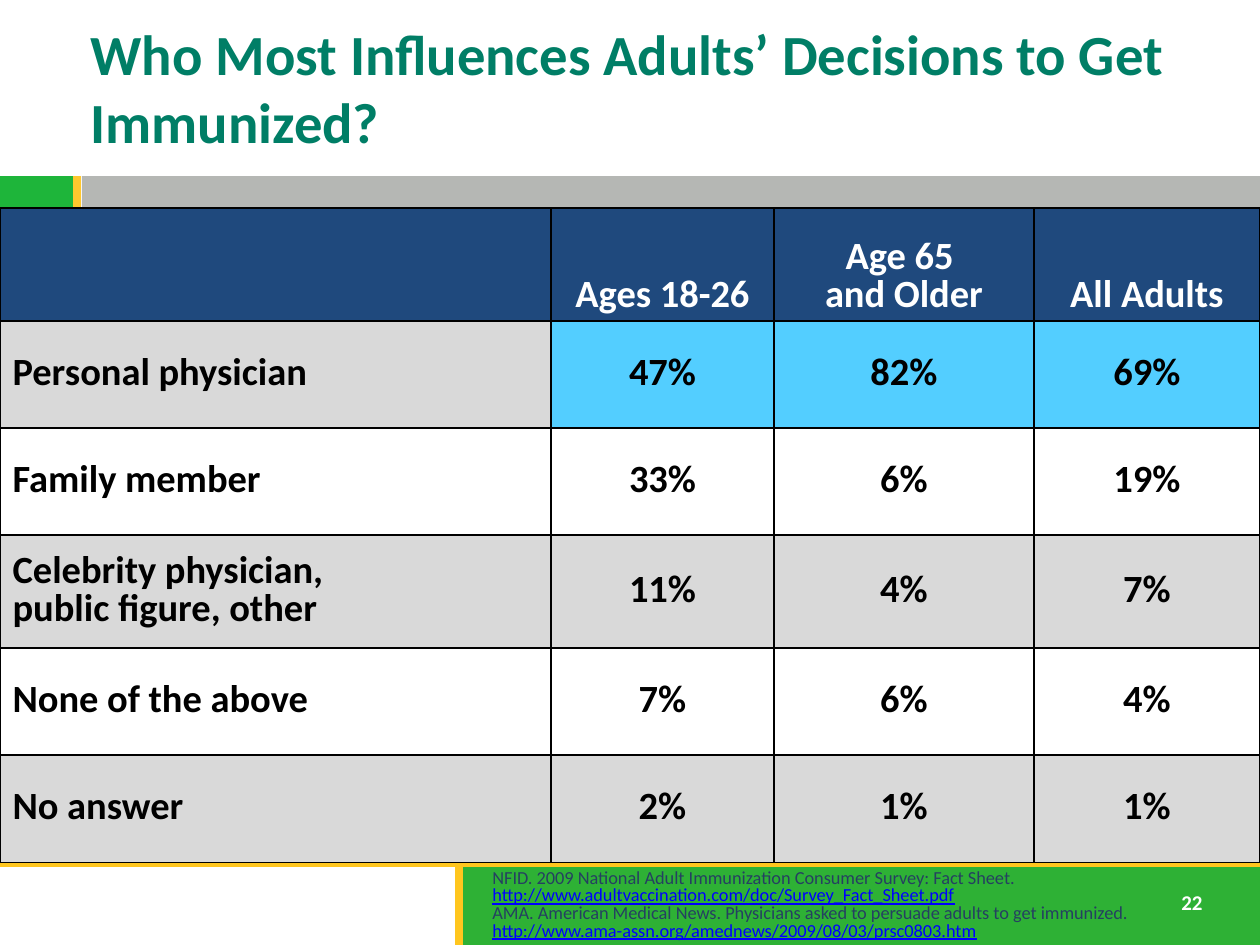
import dataclasses
import typing

import lxml.etree
import pptx
import pptx.dml.color
import pptx.enum.shapes
import pptx.enum.text
import pptx.oxml.ns
import pptx.util

SCALE = 914400 / 126
ALIGN = pptx.enum.text.PP_ALIGN
ANCHOR = pptx.enum.text.MSO_ANCHOR
FIT = pptx.enum.text.MSO_AUTO_SIZE


@dataclasses.dataclass(frozen=True)
class Theme:
    font: str = "Calibri"
    white: str = "FFFFFF"
    black: str = "000000"
    title: str = "007E66"
    green: str = "1EB53A"
    foot: str = "2EB135"
    gray: str = "B5B7B4"
    gold: str = "FFC61E"
    amber: str = "FFC82E"
    navy: str = "1F497D"
    sky: str = "53CEFF"
    shade: str = "D9D9D9"
    note: str = "254061"
    link: str = "0000FF"
    head: float = 32.4
    body: float = 22
    small: float = 10.5
    page: float = 12
    tight: float = 0.8


class Box(typing.NamedTuple):
    x: int
    y: int
    w: int
    h: int


class Bar(typing.NamedTuple):
    box: Box
    fill: str


class Rule(typing.NamedTuple):
    x1: int
    y1: int
    x2: int
    y2: int
    color: str


class Row(typing.NamedTuple):
    high: int
    texts: tuple[str, ...]


class Part(typing.NamedTuple):
    text: str
    link: bool = False


T = Theme()

BARS = [
    Bar(Box(0, 170, 1260, 44), T.white),
    Bar(Box(0, 176, 73, 32), T.green),
    Bar(Box(82, 176, 1178, 32), T.gray),
    Bar(Box(1, 858, 1259, 83), T.white),
    Bar(Box(456, 862, 804, 83), T.foot),
]
RULES = [
    Rule(0, 863, 1260, 863, T.gold),
    Rule(459, 864, 459, 945, T.gold),
    Rule(77, 176, 77, 208, T.amber),
]
COLS = [551, 223, 260, 226]
ROWS = [
    Row(113, ("", "Ages 18-26", "Age 65 \vand Older", "All Adults")),
    Row(107, ("Personal physician", "47%", "82%", "69%")),
    Row(107, ("Family member", "33%", "6%", "19%")),
    Row(113, ("Celebrity physician, \vpublic figure, other", "11%", "4%", "7%")),
    Row(107, ("None of the above", "7%", "6%", "4%")),
    Row(108, ("No answer", "2%", "1%", "1%")),
]
NOTES = [
    [Part("NFID. 2009 National Adult Immunization Consumer Survey: Fact Sheet. "),
     Part("http://www.adultvaccination.com/doc/Survey_Fact_Sheet.pdf", True)],
    [Part("AMA. American Medical News. Physicians asked to persuade adults to get immunized.")],
    [Part("http://www.ama-assn.org/amednews/2009/08/03/prsc0803.htm", True)],
]


def px(n: int) -> int:
    return round(n * SCALE)


def rgb(code: str) -> pptx.dml.color.RGBColor:
    return pptx.dml.color.RGBColor.from_string(code)


def style(run, size: float, color: str, bold: bool = False) -> None:
    run.font.name = T.font
    run.font.size = pptx.util.Pt(size)
    run.font.bold = bold
    run.font.color.rgb = rgb(color)


def draw_bar(slide, bar: Bar) -> None:
    shape = slide.shapes.add_shape(
        pptx.enum.shapes.MSO_SHAPE.RECTANGLE, *map(px, bar.box))
    shape.shadow.inherit = False
    shape.fill.solid()
    shape.fill.fore_color.rgb = rgb(bar.fill)
    shape.line.fill.background()


def draw_rule(slide, rule: Rule) -> None:
    line = slide.shapes.add_connector(
        pptx.enum.shapes.MSO_CONNECTOR.STRAIGHT, *map(px, rule[:4]))
    line.line.color.rgb = rgb(rule.color)
    line.line.width = pptx.util.Pt(4.5)
    lxml.etree.SubElement(line._element.spPr, pptx.oxml.ns.qn("a:effectLst"))


def draw_title(slide, box: Box, text: str) -> None:
    title = slide.shapes.title
    title.left, title.top, title.width, title.height = map(px, box)
    frame = title.text_frame
    frame.text = text
    frame.word_wrap = True
    frame.auto_size = FIT.NONE
    frame.vertical_anchor = ANCHOR.MIDDLE
    para = frame.paragraphs[0]
    para.alignment = ALIGN.LEFT
    style(para.runs[0], T.head, T.title, True)


def draw_page(slide, box: Box, text: str) -> None:
    frame = slide.shapes.add_textbox(*map(px, box)).text_frame
    frame.text = text
    frame.word_wrap = False
    style(frame.paragraphs[0].runs[0], T.page, T.white, True)


def edge(cell) -> None:
    props = cell._tc.get_or_add_tcPr()
    for side in ("lnL", "lnR", "lnT", "lnB"):
        line = lxml.etree.SubElement(
            props, pptx.oxml.ns.qn(f"a:{side}"), w=str(pptx.util.Pt(1)))
        fill = lxml.etree.SubElement(line, pptx.oxml.ns.qn("a:solidFill"))
        lxml.etree.SubElement(fill, pptx.oxml.ns.qn("a:srgbClr"), val=T.black)


def shade(r: int, c: int) -> str:
    if r == 0:
        return T.navy
    if r == 1 and c > 0:
        return T.sky
    return T.shade if r % 2 else T.white


def draw_cell(cell, r: int, c: int, text: str) -> None:
    edge(cell)
    cell.fill.solid()
    cell.fill.fore_color.rgb = rgb(shade(r, c))
    cell.vertical_anchor = ANCHOR.MIDDLE if r else ANCHOR.BOTTOM
    cell.text_frame.text = text
    para = cell.text_frame.paragraphs[0]
    para.alignment = ALIGN.CENTER if c else ALIGN.LEFT
    para.line_spacing = T.tight
    for run in para.runs:
        style(run, T.body, T.black if r else T.white, True)


def draw_table(slide, x: int, y: int) -> None:
    box = Box(x, y, sum(COLS), sum(row.high for row in ROWS))
    table = slide.shapes.add_table(len(ROWS), len(COLS), *map(px, box)).table
    for col, wide in zip(table.columns, COLS):
        col.width = px(wide)
    for r, row in enumerate(ROWS):
        table.rows[r].height = px(row.high)
        for c, text in enumerate(row.texts):
            draw_cell(table.cell(r, c), r, c, text)


def draw_notes(slide, box: Box) -> None:
    frame = slide.shapes.add_textbox(*map(px, box)).text_frame
    frame.word_wrap = True
    for i, parts in enumerate(NOTES):
        para = frame.add_paragraph() if i else frame.paragraphs[0]
        para.line_spacing = T.tight
        for part in parts:
            run = para.add_run()
            run.text = part.text
            style(run, T.small, T.link if part.link else T.note)
            run.font.underline = part.link


def main() -> None:
    deck = pptx.Presentation()
    deck.slide_width, deck.slide_height = px(1260), px(945)
    slide = deck.slides.add_slide(deck.slide_layouts[5])
    for bar in BARS:
        draw_bar(slide, bar)
    for rule in RULES:
        draw_rule(slide, rule)
    draw_page(slide, Box(1169, 883, 50, 38), "22")
    draw_title(slide, Box(78, 8, 1134, 157),
               "Who Most Influences Adults’ Decisions to Get Immunized?")
    draw_table(slide, 0, 208)
    draw_notes(slide, Box(480, 864, 709, 87))
    deck.save("out.pptx")


if __name__ == "__main__":
    main()
